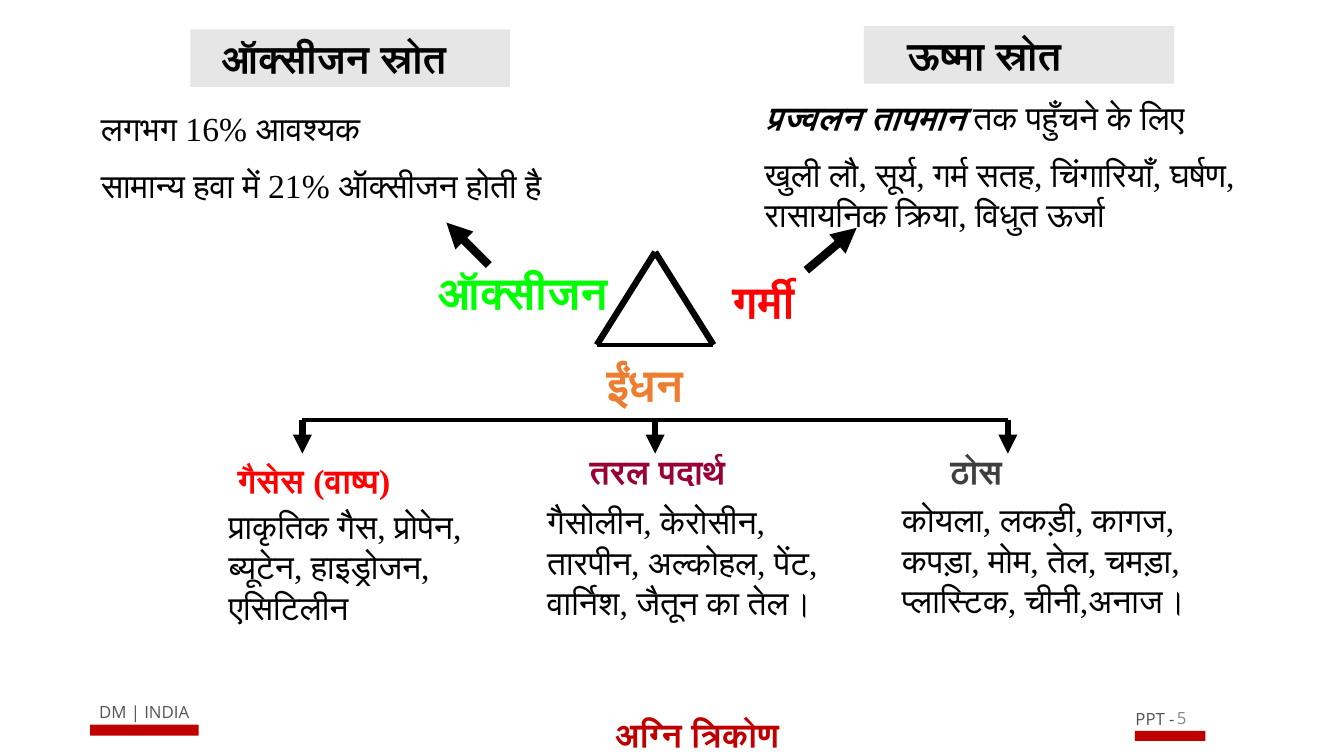
from dataclasses import dataclass

from lxml.etree import SubElement
from pptx import Presentation
from pptx.dml.color import RGBColor
from pptx.enum.shapes import MSO_CONNECTOR, MSO_SHAPE
from pptx.enum.text import MSO_ANCHOR, MSO_AUTO_SIZE, PP_ALIGN
from pptx.oxml.ns import qn
from pptx.slide import Slide
from pptx.text.text import TextFrame
from pptx.util import Cm, Pt

BLACK = RGBColor(0x00, 0x00, 0x00)
RED = RGBColor(0xFF, 0x00, 0x00)
GREEN = RGBColor(0x00, 0xFF, 0x00)
ORANGE = RGBColor(0xED, 0x7D, 0x31)
MAROON = RGBColor(0x99, 0x00, 0x33)
CHARCOAL = RGBColor(0x3F, 0x3F, 0x3F)
FOOTER_GRAY = RGBColor(0x53, 0x53, 0x53)
NUMBER_GRAY = RGBColor(0x88, 0x88, 0x88)
PALE_GRAY = RGBColor(0xE7, 0xE6, 0xE6)
DARK_RED = RGBColor(0xC0, 0x00, 0x00)

SANS = "Open Sans"
SERIF = "Times New Roman"

APEX = (16.51, 6.35)
BASE_LEFT = (15.04, 8.69)
BASE_RIGHT = (17.98, 8.69)
BRANCH_TOP, BRANCH_BOTTOM = 10.59, 11.43
BRANCH_CENTERS = (7.62, 16.51, 25.4)


@dataclass(frozen=True)
class Box:
    left: float
    top: float
    width: float
    height: float


@dataclass(frozen=True)
class Label:
    box: Box
    paragraphs: tuple[str, ...]
    size: int = 24
    font: str = SERIF
    color: RGBColor = BLACK
    bold: bool = False
    centered: bool = False
    inset: float = 0.25
    bold_lead: str = ""
    fill: RGBColor | None = None
    middle: bool = False


@dataclass(frozen=True)
class Line:
    start: tuple[float, float]
    end: tuple[float, float]
    width: float
    arrow: bool = False


FOOTER_BARS = (Box(2.27, 18.26, 2.74, 0.28), Box(28.6, 18.42, 1.78, 0.25))

FOOTER_LABELS = (
    Label(Box(0.61, 17.45, 6.05, 0.94), ("DM | INDIA",), 12, SANS, FOOTER_GRAY, centered=True),
    Label(Box(28.35, 17.63, 1.52, 0.94), ("PPT -",), 12, SANS, FOOTER_GRAY, centered=True),
)

LABELS = (
    Label(Box(10.8, 6.55, 5.28, 1.6), ("ऑक्सीजन",), 32, SANS, GREEN, True),
    Label(Box(18.21, 6.78, 3.61, 1.6), ("गर्मी",), 32, SANS, RED, True),
    Label(Box(15.04, 8.86, 3.18, 1.63), ("ईंधन",), 32, SANS, ORANGE, True),
    Label(Box(4.8, 0.74, 8.05, 1.45), ("ऑक्सीजन स्रोत",), 28, bold=True, inset=0.79, fill=PALE_GRAY),
    Label(Box(21.77, 0.66, 7.82, 1.45), ("ऊष्मा स्रोत",), 28, bold=True, inset=1.09, fill=PALE_GRAY),
    Label(Box(2.29, 2.59, 13.97, 2.82),
          ("लगभग 16% आवश्यक", "सामान्य हवा में 21% ऑक्सीजन होती है")),
    Label(Box(19.02, 2.31, 14.86, 3.84),
          (" तक पहुँचने के लिए",
           "खुली लौ, सूर्य, गर्म सतह, चिंगारियाँ, घर्षण, रासायनिक क्रिया, विधुत ऊर्जा"),
          bold_lead="प्रज्वलन तापमान"),
    Label(Box(5.74, 11.46, 5, 1.27), ("गैसेस (वाष्प)",), color=RED, bold=True),
    Label(Box(14.61, 11.23, 5.08, 1.27), ("तरल पदार्थ",), color=MAROON, bold=True),
    Label(Box(23.7, 11.23, 5.08, 1.27), ("ठोस",), color=CHARCOAL, bold=True),
    Label(Box(5.51, 12.62, 7.42, 3.33),
          ("प्राकृतिक गैस, प्रोपेन, ब्यूटेन, हाइड्रोजन, एसिटिलीन",)),
    Label(Box(13.54, 12.5, 7.62, 4.37),
          ("गैसोलीन, केरोसीन, तारपीन, अल्कोहल, पेंट, वार्निश, जैतून का तेल।",)),
    Label(Box(22.48, 12.45, 8.38, 3.33),
          ("कोयला, लकड़ी, कागज, कपड़ा, मोम, तेल, चमड़ा, प्लास्टिक, चीनी,अनाज।",)),
    Label(Box(10.8, 17.86, 13.54, 1.27), ("अग्नि त्रिकोण",), 24, SANS, DARK_RED, True, True),
    Label(Box(29.41, 17.58, 1.27, 1.02), ("5",), 12, SANS, NUMBER_GRAY, middle=True),
)

LINES = (
    Line(BASE_LEFT, BASE_RIGHT, 3),
    Line(APEX, BASE_LEFT, 4.5),
    Line(APEX, BASE_RIGHT, 4.5),
    Line((20.32, 6.81), (21.59, 5.74), 6, True),
    Line((12.32, 6.68), (11.25, 5.61), 6, True),
    Line((BRANCH_CENTERS[0], BRANCH_TOP), (BRANCH_CENTERS[-1], BRANCH_TOP), 3),
    *(Line((center, BRANCH_TOP), (center, BRANCH_BOTTOM), 4.5, True) for center in BRANCH_CENTERS),
)


def draw_rectangle(slide: Slide, box: Box, color: RGBColor):
    shape = slide.shapes.add_shape(
        MSO_SHAPE.RECTANGLE, Cm(box.left), Cm(box.top), Cm(box.width), Cm(box.height))
    shape.shadow.inherit = False
    shape.fill.solid()
    shape.fill.fore_color.rgb = color
    shape.line.fill.background()
    return shape


def write_text(frame: TextFrame, label: Label) -> None:
    frame.word_wrap = True
    frame.auto_size = MSO_AUTO_SIZE.NONE if label.middle else MSO_AUTO_SIZE.SHAPE_TO_FIT_TEXT
    frame.vertical_anchor = MSO_ANCHOR.MIDDLE if label.middle else MSO_ANCHOR.TOP
    frame.margin_left, frame.margin_right = Cm(label.inset), Cm(0.25)
    frame.margin_top = frame.margin_bottom = Cm(0.23 if label in FOOTER_LABELS else 0.13)
    for index, text in enumerate(label.paragraphs):
        paragraph = frame.add_paragraph() if index else frame.paragraphs[0]
        paragraph.alignment = PP_ALIGN.CENTER if label.centered else PP_ALIGN.LEFT
        if index:
            paragraph.space_before = Pt(12)
        elif label.bold_lead:
            lead = paragraph.add_run()
            lead.text = label.bold_lead
            lead.font.bold = lead.font.italic = True
        paragraph.add_run().text = text
        paragraph.font.name = label.font
        paragraph.font.size = Pt(label.size)
        paragraph.font.bold = label.bold
        paragraph.font.color.rgb = label.color


def draw_label(slide: Slide, label: Label) -> None:
    box = label.box
    if label.fill is not None:
        shape = draw_rectangle(slide, box, label.fill)
    else:
        shape = slide.shapes.add_textbox(
            Cm(box.left), Cm(box.top), Cm(box.width), Cm(box.height))
    write_text(shape.text_frame, label)


def draw_line(slide: Slide, line: Line) -> None:
    connector = slide.shapes.add_connector(
        MSO_CONNECTOR.STRAIGHT, *(Cm(value) for value in line.start + line.end))
    connector.line.color.rgb = BLACK
    connector.line.width = Pt(line.width)
    if line.arrow:
        SubElement(connector.line._get_or_add_ln(), qn("a:tailEnd"), type="triangle")
    SubElement(connector._element.spPr, qn("a:effectLst"))


def main() -> None:
    presentation = Presentation()
    presentation.slide_width = Cm(33.87)
    presentation.slide_height = Cm(19.05)
    slide = presentation.slides.add_slide(presentation.slide_layouts[6])
    for label in FOOTER_LABELS:
        draw_label(slide, label)
    for bar in FOOTER_BARS:
        draw_rectangle(slide, bar, DARK_RED)
    for line in LINES:
        draw_line(slide, line)
    for label in LABELS:
        draw_label(slide, label)
    presentation.save("out.pptx")


if __name__ == "__main__":
    main()
